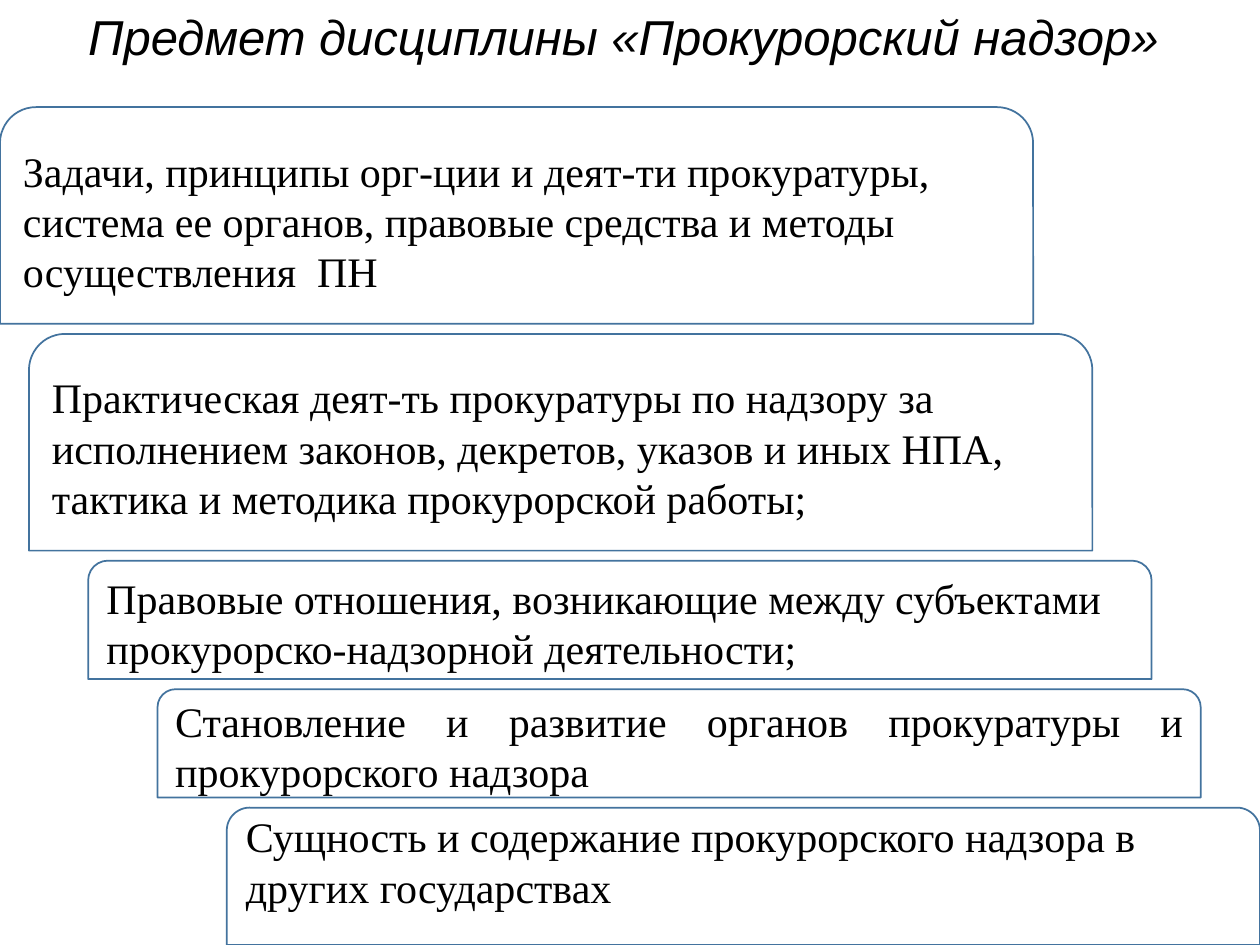
from lxml.etree import SubElement
from pptx import Presentation
from pptx.dml.color import RGBColor
from pptx.enum.shapes import MSO_SHAPE
from pptx.enum.text import MSO_ANCHOR, MSO_AUTO_SIZE, PP_ALIGN
from pptx.oxml.ns import qn
from pptx.util import Inches, Pt

COLS, ROWS = 100, 75  # grid laid over the slide


def color(code):
    return RGBColor.from_string(code)


class Deck:
    ink, paper, edge = "000000", "FFFFFF", "43739E"

    def __init__(self):
        self.show = Presentation()
        self.show.slide_width = Inches(10)
        self.show.slide_height = Inches(7.5)
        self.slide = self.show.slides.add_slide(self.show.slide_layouts[6])

    def area(self, col, row, wide, high):
        across = self.show.slide_width / COLS
        down = self.show.slide_height / ROWS
        return (round(col * across), round(row * down),
                round(wide * across), round(high * down))

    def label(self, frame, text, face, size, align, italic=False):
        frame.word_wrap = True
        frame.text = text
        line = frame.paragraphs[0]
        line.alignment = align
        font = line.runs[0].font
        font.name, font.size, font.italic = face, Pt(size), italic
        font.color.rgb = color(self.ink)

    def title(self, text, *place):
        box = self.slide.shapes.add_textbox(*self.area(*place))
        box.text_frame.auto_size = MSO_AUTO_SIZE.SHAPE_TO_FIT_TEXT
        self.label(box.text_frame, text, "Arial", 28, PP_ALIGN.CENTER, True)

    def step(self, text, *place, align=PP_ALIGN.LEFT, alpha=100, foot=0.05):
        card = self.slide.shapes.add_shape(
            MSO_SHAPE.ROUND_2_SAME_RECTANGLE, *self.area(*place))
        card.shadow.inherit = False
        card.fill.solid()
        card.fill.fore_color.rgb = color(self.paper)
        if alpha < 100:
            tint = card.element.spPr.find(qn("a:solidFill"))[0]
            SubElement(tint, qn("a:alpha"), val=str(alpha * 1000))
        card.line.color.rgb = color(self.edge)
        card.line.width = Pt(1)
        frame = card.text_frame
        frame.vertical_anchor = MSO_ANCHOR.MIDDLE
        frame.margin_bottom = Inches(foot)
        self.label(frame, text, "Times New Roman", 24, align)


def main():
    deck = Deck()

    # Staircase of topics: left column, width, height, text, options
    steps = [
        (0, 82, 17.2, "Задачи, принципы орг-ции и деят-ти прокуратуры, "
         "система ее органов, правовые средства и методы осуществления  ПН",
         {"alpha": 66}),
        (2.3, 84.4, 17.2, "Практическая деят-ть прокуратуры по надзору за "
         "исполнением законов, декретов, указов и иных НПА, "
         "тактика и методика прокурорской работы;", {}),
        (7, 84.4, 9.4, "Правовые отношения, возникающие между субъектами "
         "прокурорско-надзорной деятельности;", {}),
        (12.5, 82.8, 8.6, "Становление и развитие органов прокуратуры и "
         "прокурорского надзора", {"align": PP_ALIGN.JUSTIFY}),
        (18, 82, 10.9, "Сущность и содержание прокурорского надзора в "
         "других государствах", {"foot": 0.34}),
    ]
    row, gap = 8.5, 0.8
    for col, wide, high, text, style in steps:
        deck.step(text, col, row, wide, high, **style)
        row += high + gap

    # Heading
    deck.title("Предмет дисциплины «Прокурорский надзор» ", 0, 0, COLS, 5.7)
    deck.show.save("out.pptx")


if __name__ == "__main__":
    main()
